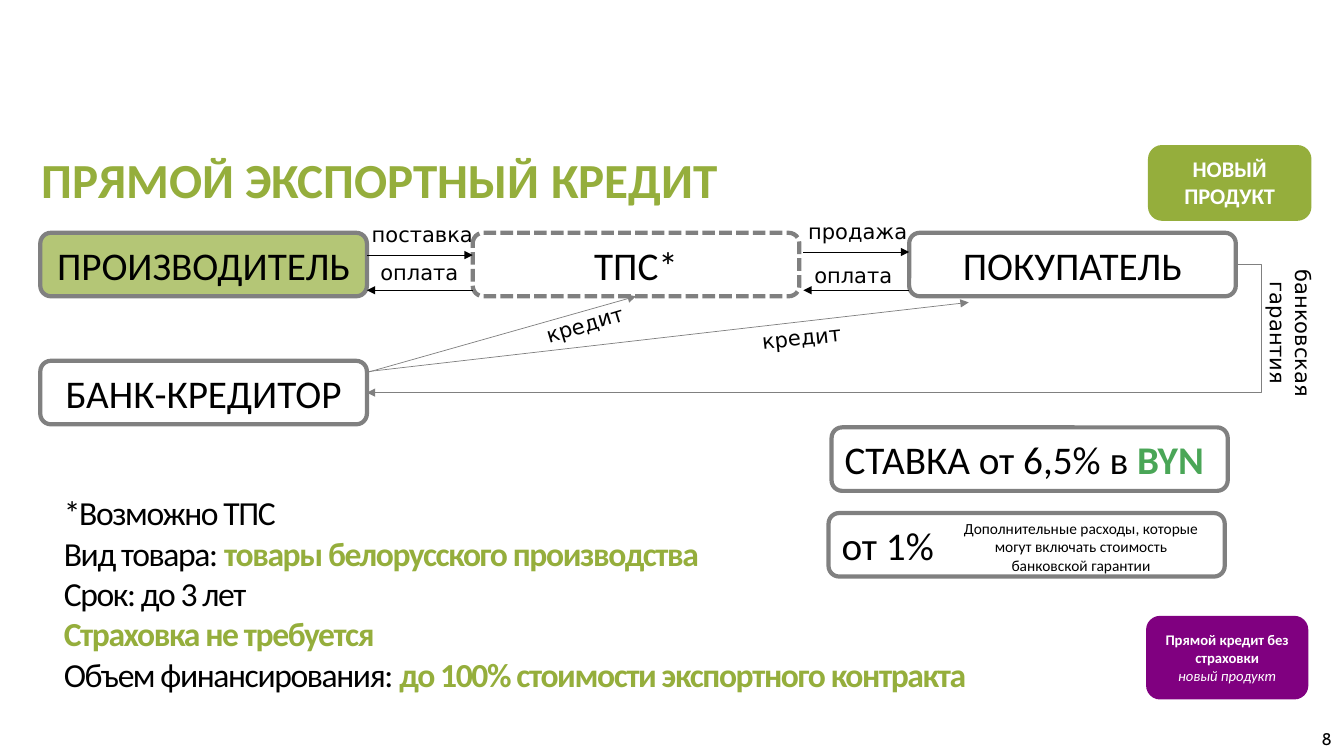
from lxml import etree
from pptx import Presentation
from pptx import util as u
from pptx.dml.color import RGBColor
from pptx.enum import dml, shapes, text
from pptx.oxml import ns

# Grid: 40 columns by 30 rows
WIDTH, HEIGHT = u.Inches(13.33), u.Inches(7.5)
COLUMN, ROW = WIDTH / 40, HEIGHT / 30
GREEN, GRAY, BLACK, WHITE = "95AE3C", "808080", "000000", "FFFFFF"
LEFT, CENTER, RIGHT = text.PP_ALIGN.LEFT, text.PP_ALIGN.CENTER, text.PP_ALIGN.RIGHT
PARTY_WIDTH, PARTY_HEIGHT, LABEL_HEIGHT = 9.72, 2.52, 1.4


def color(hex_string):
    return RGBColor.from_string(hex_string)


def place(origin, left, top, width, height):
    """Grid box relative to a region's corner, in slide units."""
    return (round((origin[0] + left) * COLUMN), round((origin[1] + top) * ROW),
            round(width * COLUMN), round(height * ROW))


def add_child(parent, tag, **attributes):
    return etree.SubElement(parent, ns.qn(tag), **attributes)


def write(shape, paragraphs, size, font="Calibri", ink=BLACK, align=LEFT,
          bold=False, spacing=None, grow=True):
    """Each paragraph is a list of runs: (text, changes to the font)."""
    frame = shape.text_frame
    frame.word_wrap = True
    frame.vertical_anchor = text.MSO_ANCHOR.TOP
    if grow:
        frame.auto_size = text.MSO_AUTO_SIZE.SHAPE_TO_FIT_TEXT
    for index, runs in enumerate(paragraphs):
        paragraph = frame.add_paragraph() if index else frame.paragraphs[0]
        paragraph.alignment = align
        paragraph.font.size = u.Pt(size)
        paragraph.font.name = font
        paragraph.font.bold = bold
        paragraph.font.color.rgb = color(ink)
        for words, changes in runs:
            run = paragraph.add_run()
            run.text = words
            if "ink" in changes:
                run.font.color.rgb = color(changes["ink"])
            if "bold" in changes:
                run.font.bold = changes["bold"]
            if "italic" in changes:
                run.font.italic = changes["italic"]
            if spacing:
                run.font._element.set("spc", str(spacing))


def add_text(slide, box, words, size, **style):
    shape = slide.shapes.add_textbox(*box)
    write(shape, [[(words, {})]], size, **style)
    return shape


def add_label(slide, box, words, rotation=0, align=CENTER):
    add_text(slide, box, words, 15, font="DejaVu Sans", align=align).rotation = rotation


def add_box(slide, box, paragraphs, size, fill=None, line=None, **style):
    shape = slide.shapes.add_shape(shapes.MSO_SHAPE.ROUNDED_RECTANGLE, *box)
    shape.shadow.inherit = False
    if fill:
        shape.fill.solid()
        shape.fill.fore_color.rgb = color(fill)
    else:
        shape.fill.background()
    if line:
        shape.line.color.rgb = color(line)
        shape.line.width = u.Pt(3)
    else:
        shape.line.fill.background()
    write(shape, paragraphs, size, **style)
    return shape


def add_arrow(slide, origin, start, end, ink=GRAY, kind=shapes.MSO_CONNECTOR.STRAIGHT):
    points = place(origin, *start, 0, 0)[:2] + place(origin, *end, 0, 0)[:2]
    arrow = slide.shapes.add_connector(kind, *points)
    arrow.line.color.rgb = color(ink)
    arrow.line.width = u.Pt(0.5)
    add_child(arrow.line._get_or_add_ln(), "a:tailEnd", type="triangle")
    add_child(arrow._element.spPr, "a:effectLst")
    return arrow


def draw_header(slide, origin):
    title = add_text(slide, place(origin, 0, 0, 37.86, 2.76), "ПРЯМОЙ ЭКСПОРТНЫЙ КРЕДИТ",
                     35, ink=GREEN, bold=True)
    title.text_frame.margin_left = title.text_frame.margin_right = u.Inches(0.04)
    add_box(slide, place(origin, 33.12, 0.12, 4.74, 2.84), [[("НОВЫЙ ПРОДУКТ", {})]], 16,
            fill=GREEN, line=GREEN, ink=WHITE, bold=True, align=CENTER)


def draw_scheme(slide, origin):
    # Parties
    parties = {}
    for name, left, top in [("ПРОИЗВОДИТЕЛЬ", 0, 0), ("ТПС*", 12.87, 0),
                            ("ПОКУПАТЕЛЬ", 25.86, 0), ("БАНК-КРЕДИТОР", 0, 5.08)]:
        parties[name] = add_box(slide, place(origin, left, top, PARTY_WIDTH, PARTY_HEIGHT),
                                [[(name, {})]], 28, line=GRAY, align=CENTER)
    parties["ТПС*"].line.dash_style = dml.MSO_LINE.SQUARE_DOT
    producer = parties["ПРОИЗВОДИТЕЛЬ"]
    producer.fill.solid()
    producer.fill.fore_color.rgb = color(GREEN)
    tint = producer._element.spPr.find(ns.qn("a:solidFill"))[0]
    add_child(tint, "a:alpha", val="70000")

    # Goods go right, payment comes back
    for left, right, row in [(9.72, 12.87, 0.88), (22.71, 25.86, 0.76)]:
        add_arrow(slide, origin, (left, row), (right, row), BLACK)
        add_arrow(slide, origin, (right, 2.28), (left, 2.28), BLACK)
    for words, left, top, width, align in [
            ("поставка", 9.57, -0.64, 3.66, LEFT), ("оплата", 9.57, 0.88, 3.42, CENTER),
            ("продажа", 22.56, -0.76, 3.66, LEFT), ("оплата", 21.81, 1, 4.77, CENTER)]:
        add_label(slide, place(origin, left, top, width, LABEL_HEIGHT), words, align=align)

    # Credit from the bank
    add_arrow(slide, origin, (9.66, 5.52), (27.63, 2.76))
    to_trader = add_arrow(slide, origin, (9.78, 5.52), (17.73, 2.52))
    to_trader.end_connect(parties["ТПС*"], 2)
    for left, top, rotation in [(20.82, 3.44, 353.9), (14.37, 2.92, 343)]:
        add_label(slide, place(origin, left, top, 3.66, LABEL_HEIGHT), "кредит", rotation)

    # Guarantee from the buyer back to the bank
    guarantee = add_arrow(slide, origin, (35.58, 1.26), (9.72, 6.34),
                          kind=shapes.MSO_CONNECTOR.ELBOW)
    guarantee.begin_connect(parties["ПОКУПАТЕЛЬ"], 3)
    guarantee.end_connect(parties["БАНК-КРЕДИТОР"], 3)
    bend = guarantee._element.spPr.find(ns.qn("a:prstGeom")).find(ns.qn("a:avLst"))
    add_child(bend, "a:gd", name="adj1", fmla="val -2900")
    add_label(slide, place(origin, 34.56, 2.76, 5.28, 2.44), "банковская гарантия", 90)


def draw_rates(slide, origin):
    rates = [(0.09, 0, [("СТАВКА от 6,5% в ", {}), ("BYN", {"ink": "4AA657", "bold": True})]),
             (0, 3.4, [("от 1%", {})])]
    for left, top, runs in rates:
        add_box(slide, place(origin, left, top, 11.79, PARTY_HEIGHT), [runs], 28, line=GRAY)
    add_text(slide, place(origin, 3.72, 3.44, 7.59, 2.64),
             "Дополнительные расходы, которые могут включать стоимость банковской гарантии",
             11, align=CENTER)


def draw_terms(slide, origin):
    strong = {"ink": GREEN, "bold": True}
    terms = [[("*Возможно ТПС", {})],
             [("Вид товара: ", {}), ("товары белорусского производства", strong)],
             [("Срок: до 3 лет", {})],
             [("Страховка не требуется", strong)],
             [("Объем финансирования: ", {}),
              ("до 100% стоимости экспортного контракта", strong)]]
    add_box(slide, place(origin, 0, 0, 35.58, 9.4), terms, 24, spacing=-100)


def draw_footer(slide, origin):
    badge = add_box(slide, place(origin, 0, 0, 4.83, 3.32),
                    [[("Прямой кредит без страховки", {"bold": True})],
                     [("новый продукт", {"italic": True})]],
                    10.5, fill="800080", ink=WHITE, align=CENTER)
    badge.text_frame.vertical_anchor = text.MSO_ANCHOR.MIDDLE
    add_text(slide, place(origin, 3.6, 4.28, 2.22, 1.32), "8", 12,
             font="Cabin", align=RIGHT, grow=False)


def main():
    presentation = Presentation()
    presentation.slide_width, presentation.slide_height = WIDTH, HEIGHT
    slide = presentation.slides.add_slide(presentation.slide_layouts[6])
    draw_header(slide, (1.11, 5.72))
    draw_scheme(slide, (1.2, 9.24))
    draw_rates(slide, (24.66, 16.96))
    draw_terms(slide, (1.26, 18.88))
    draw_footer(slide, (34.11, 24.44))
    presentation.save("out.pptx")


if __name__ == "__main__":
    main()
